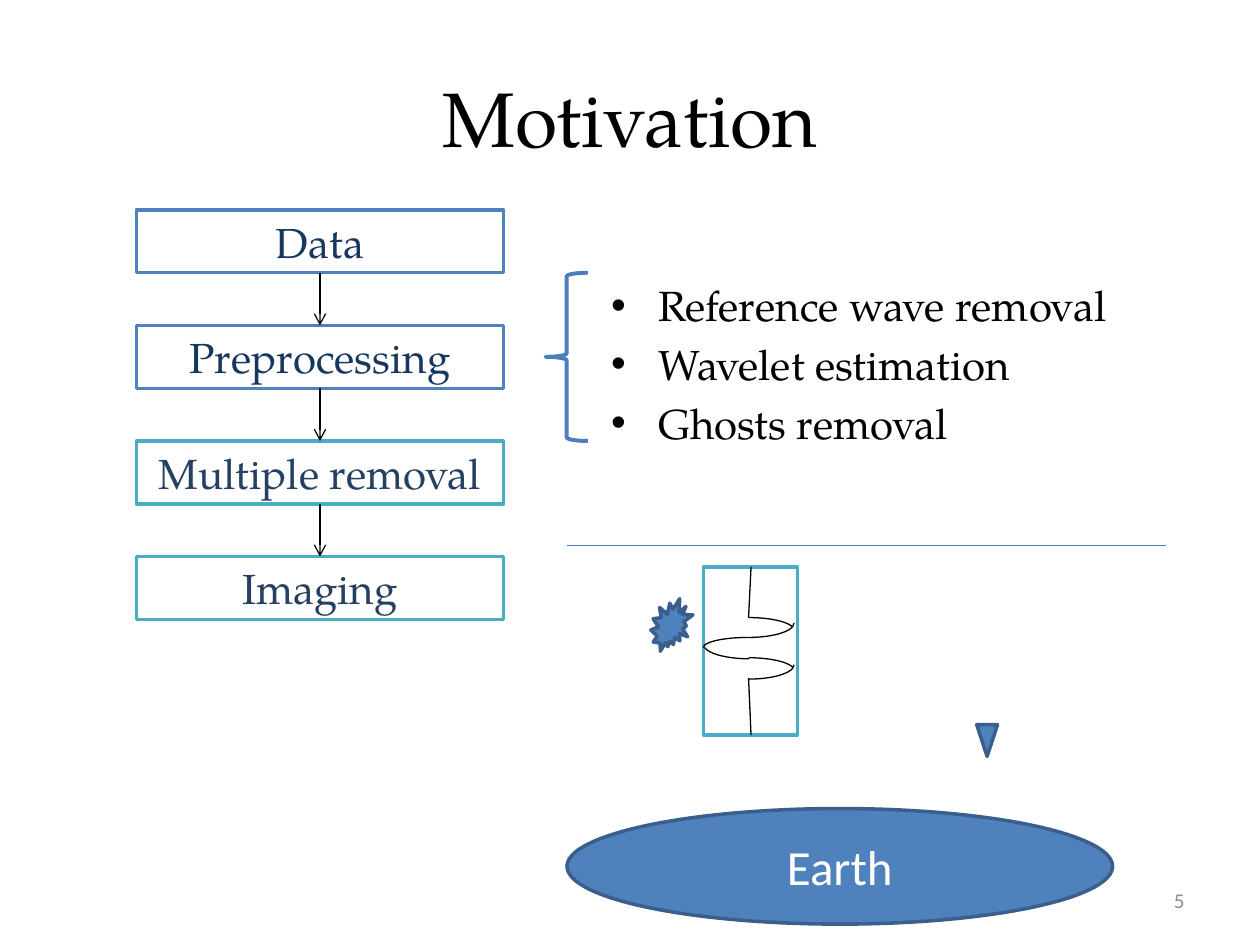
from lxml.etree import SubElement
from pptx import Presentation
from pptx.dml.color import RGBColor
from pptx.enum.shapes import MSO_CONNECTOR, MSO_SHAPE
from pptx.enum.text import MSO_ANCHOR, PP_ALIGN
from pptx.oxml.ns import qn
from pptx.util import Cm, Pt

SERIF = "TeX Gyre Pagella"
SANS = "Calibri"
BLACK = RGBColor(0x00, 0x00, 0x00)
WHITE = RGBColor(0xFF, 0xFF, 0xFF)
GREY = RGBColor(0x8C, 0x8C, 0x8C)
BLUE = RGBColor(0x4F, 0x81, 0xBD)
LINE_BLUE = RGBColor(0x4B, 0x7E, 0xBC)
EDGE_BLUE = RGBColor(0x3A, 0x5F, 0x8C)
TEAL = RGBColor(0x4B, 0xAC, 0xC6)
NAVY = RGBColor(0x17, 0x37, 0x5E)
SLATE = RGBColor(0x25, 0x40, 0x61)

STEPS = [("Data", BLUE, NAVY), ("Preprocessing", BLUE, NAVY),
         ("Multiple removal", TEAL, SLATE), ("Imaging", TEAL, SLATE)]
TASKS = ["Reference wave removal", "Wavelet estimation", "Ghosts removal"]

# Top and height in cm, rotation, mirrored, end cut short
WAVELET_ARCS = [
    (12.85, 0.41, 0, True, False),
    (12.70, 0.58, 180, False, True),
    (12.45, 0.51, 0, False, True),
    (12.27, 0.58, 180, True, False),
    (13.26, 0.51, 0, False, True),
    (13.11, 0.58, 180, True, False),
]


def write(p, text, size, color, font=SERIF, align=PP_ALIGN.CENTER):
    p.alignment = align
    r = p.add_run()
    r.text = text
    r.font.size = Pt(size)
    r.font.name = font
    r.font.color.rgb = color


def add_shape(s, kind, box, line, width=2, fill=None):
    """Draw a preset shape; box is left, top, width and height in cm."""
    sp = s.shapes.add_shape(kind, *map(Cm, box))
    sp.shadow.inherit = False
    if fill is None:
        sp.fill.background()
    else:
        sp.fill.solid()
        sp.fill.fore_color.rgb = fill
    sp.line.color.rgb = line
    sp.line.width = Pt(width)
    return sp


def add_line(s, start, end, color=BLACK, arrow=False):
    cx = s.shapes.add_connector(MSO_CONNECTOR.STRAIGHT, *map(Cm, start + end))
    cx.line.color.rgb = color
    cx.line.width = Pt(0.75)
    if arrow:
        SubElement(cx.line._get_or_add_ln(), qn("a:tailEnd"), type="arrow")
    SubElement(cx._element.spPr, qn("a:effectLst"))


def add_text_box(s, box):
    tf = s.shapes.add_textbox(*map(Cm, box)).text_frame
    tf.word_wrap = True
    return tf


def add_title(s, text):
    title = s.shapes.title
    title.left, title.top, title.width, title.height = map(
        Cm, (1.27, 0.76, 22.86, 3.18))
    title.text_frame.vertical_anchor = MSO_ANCHOR.MIDDLE
    write(title.text_frame.paragraphs[0], text, 44, BLACK)


def add_flow(s):
    left, top, width, height, pitch = 2.75, 4.23, 7.4, 1.27, 2.33
    center = left + width / 2
    for i, (text, line, color) in enumerate(STEPS):
        y = top + i * pitch
        sp = add_shape(s, MSO_SHAPE.RECTANGLE, (left, y, width, height),
                       line, fill=WHITE)
        tf = sp.text_frame
        tf.vertical_anchor = MSO_ANCHOR.TOP
        write(tf.paragraphs[0], text, 24, color)
        if i:
            add_line(s, (center, y - pitch + height), (center, y), arrow=True)


def add_bullets(s, items):
    tf = add_text_box(s, (12.07, 5.51, 11.43, 12.7))
    for i, text in enumerate(items):
        p = tf.add_paragraph() if i else tf.paragraphs[0]
        pPr = p._p.get_or_add_pPr()
        pPr.set("marL", str(Cm(0.95)))
        pPr.set("indent", str(-Cm(0.95)))
        SubElement(pPr, qn("a:buFont"), typeface="Arial")
        SubElement(pPr, qn("a:buChar"), char="•")
        if i:
            p.space_before = Pt(4.8)
        write(p, text, 24, BLACK, align=PP_ALIGN.LEFT)


def add_wavelet(s):
    add_shape(s, MSO_SHAPE.RECTANGLE, (14.18, 11.43, 1.9, 3.39),
              TEAL, fill=WHITE)
    for edge, inner in ((11.43, 12.45), (14.82, 13.67)):
        add_line(s, (15.14, edge), (15.09, inner))
    for top, height, rotation, mirrored, cut in WAVELET_ARCS:
        arc = add_shape(s, MSO_SHAPE.ARC, (14.18, top, 1.83, height),
                        BLACK, 0.75)
        arc.rotation = rotation
        if mirrored:
            arc._element.spPr.find(qn("a:xfrm")).set("flipH", "1")
        if cut:
            arc.adjustments[0] = 162
            arc.adjustments[1] = 213.53


def add_survey(s):
    """Draw the sea surface, source, receiver and Earth."""
    add_line(s, (11.43, 11), (23.5, 11), LINE_BLUE)
    for kind, box in (
            (MSO_SHAPE.EXPLOSION2, (13.12, 12.07, 0.85, 1.06)),
            (MSO_SHAPE.FLOWCHART_MERGE, (19.69, 14.61, 0.42, 0.64))):
        add_shape(s, kind, box, EDGE_BLUE, fill=BLUE)
    earth = add_shape(s, MSO_SHAPE.OVAL, (11.43, 16.3, 11, 2.33),
                      EDGE_BLUE, fill=BLUE)
    write(earth.text_frame.paragraphs[0], "Earth", 28, WHITE, SANS)


def add_slide_number(s, number):
    tf = add_text_box(s, (18.2, 17.65, 5.93, 1.01))
    tf.vertical_anchor = MSO_ANCHOR.MIDDLE
    write(tf.paragraphs[0], number, 12, GREY, SANS, PP_ALIGN.RIGHT)


def main():
    prs = Presentation()
    prs.slide_width, prs.slide_height = Cm(25.4), Cm(19.05)
    s = prs.slides.add_slide(prs.slide_layouts[5])
    add_title(s, "Motivation")
    add_bullets(s, TASKS)
    add_flow(s)
    add_shape(s, MSO_SHAPE.LEFT_BRACE, (11, 5.5, 0.85, 3.39), LINE_BLUE, 2.25)
    add_survey(s)
    add_wavelet(s)
    add_slide_number(s, "5")
    prs.save("out.pptx")


if __name__ == "__main__":
    main()
